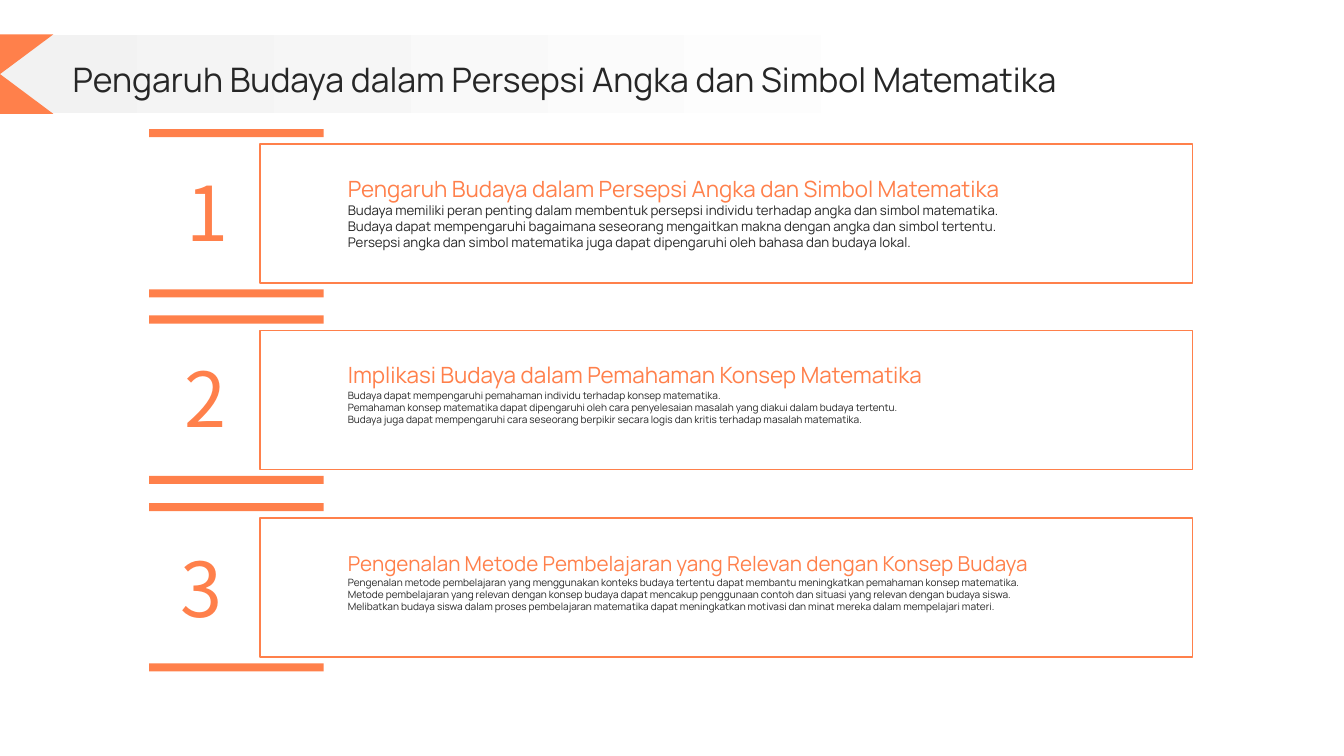
from copy import deepcopy

from pptx import Presentation
from pptx.dml.color import RGBColor
from pptx.enum.shapes import MSO_SHAPE
from pptx.enum.text import MSO_ANCHOR, MSO_AUTO_SIZE, PP_ALIGN
from pptx.oxml.ns import qn
from pptx.util import Pt

RECT, COLLATE = MSO_SHAPE.RECTANGLE, MSO_SHAPE.FLOWCHART_COLLATE
TOP, MIDDLE, BOTTOM = MSO_ANCHOR.TOP, MSO_ANCHOR.MIDDLE, MSO_ANCHOR.BOTTOM
LEFT, CENTER = PP_ALIGN.LEFT, PP_ALIGN.CENTER
NO_FIT, GROW = MSO_AUTO_SIZE.NONE, MSO_AUTO_SIZE.SHAPE_TO_FIT_TEXT

PX = 9144  # 100 px to the inch
COLORS = {"accent": "FF804B", "ink": "262626", "paper": "FFFFFF", "mist": "F2F2F2"}
TITLE = "Pengaruh Budaya dalam Persepsi Angka dan Simbol Matematika"

# heading, its size, body lines, their size, left and top offset of the number
CARDS = [
    (TITLE, 16, [
        "Budaya memiliki peran penting dalam membentuk persepsi individu terhadap angka dan simbol matematika.",
        "Budaya dapat mempengaruhi bagaimana seseorang mengaitkan makna dengan angka dan simbol tertentu.",
        "Persepsi angka dan simbol matematika juga dapat dipengaruhi oleh bahasa dan budaya lokal.",
    ], 9.5, 175, 17),
    ("Implikasi Budaya dalam Pemahaman Konsep Matematika", 16, [
        "Budaya dapat mempengaruhi pemahaman individu terhadap konsep matematika.",
        "Pemahaman konsep matematika dapat dipengaruhi oleh cara penyelesaian masalah yang diakui dalam budaya tertentu.",
        "Budaya juga dapat mempengaruhi cara seseorang berpikir secara logis dan kritis terhadap masalah matematika.",
    ], 7.2, 173, 16),
    ("Pengenalan Metode Pembelajaran yang Relevan dengan Konsep Budaya", 14.7, [
        "Pengenalan metode pembelajaran yang menggunakan konteks budaya tertentu dapat membantu meningkatkan pemahaman konsep matematika.",
        "Metode pembelajaran yang relevan dengan konsep budaya dapat mencakup penggunaan contoh dan situasi yang relevan dengan budaya siswa.",
        "Melibatkan budaya siswa dalam proses pembelajaran matematika dapat meningkatkan motivasi dan minat mereka dalam mempelajari materi.",
    ], 7.2, 169, 19),
]


def apply(target, values):
    for name, value in values.items():
        setattr(target, name, value)


class Deck:
    def __init__(self, slide, font):
        self.slide, self.font = slide, font

    def color(self, name):
        return RGBColor.from_string(COLORS[name])

    def shape(self, kind, box, fill, line=None):
        item = self.slide.shapes.add_shape(kind, *(n * PX for n in box))
        item.shadow.inherit = False
        item.fill.solid()
        item.fill.fore_color.rgb = self.color(fill)
        if line:
            item.line.color.rgb = self.color(line)
            item.line.width = Pt(1)
        else:
            item.line.fill.background()
        return item

    def fade(self, box, start, end, stop):
        fill = self.shape(RECT, box, start).fill
        fill.gradient()
        fill.gradient_angle = 0
        for mark, name, place in zip(fill.gradient_stops, (start, end), (0, stop)):
            mark.color.rgb = self.color(name)
            mark.position = place

    def text(self, box, words, size, color, anchor=TOP, align=LEFT, font=None, **frame):
        area = self.slide.shapes.add_textbox(*(n * PX for n in box)).text_frame
        base = {"word_wrap": True, "auto_size": NO_FIT, "vertical_anchor": anchor,
                "margin_left": 0, "margin_right": 0, "margin_top": 0, "margin_bottom": 0}
        apply(area, base | frame)
        para = area.paragraphs[0]
        para.text = words
        para.alignment = align
        for run in para.runs:
            apply(run.font, {"size": Pt(size), "name": font or self.font})
            run.font.color.rgb = self.color(color)
        # Line breaks take the same size as the text
        for gap in para._p.findall(qn("a:br")):
            gap.append(deepcopy(para.runs[0]._r.rPr))

    def number(self, box, digit):
        self.text(box, digit, 54, "accent", align=CENTER, font="Noto Sans CJK SC",
                  word_wrap=False, auto_size=GROW, margin_left=10 * PX,
                  margin_right=10 * PX, margin_top=5 * PX, margin_bottom=5 * PX)


def main():
    prs = Presentation()
    prs.slide_width, prs.slide_height = 1333 * PX, 750 * PX
    deck = Deck(prs.slides.add_slide(prs.slide_layouts[6]), "Manrope")

    # Numbered cards, each between two bars
    for i, (head, head_size, lines, size, left, drop) in enumerate(CARDS):
        top = 143 + i * 371 // 2
        deck.shape(RECT, (258, top, 925, 138), "paper", "accent")
        deck.text((345, top + 58, 807, 65), "\n".join(lines), size, "ink")
        deck.text((345, top + 20, 807, 37), head, head_size, "accent", BOTTOM)
        for shift in (-15, 144):
            deck.shape(RECT, (148, top + shift, 173, 8), "accent")
        deck.number((left, top + drop, 60, 101), str(i + 1))

    # Title band
    deck.fade((0, 35, 1188, 77), "mist", "paper", 0.8)
    deck.shape(COLLATE, (-53, 34, 106, 79), "accent")
    deck.text((72, 53, 1188, 51), TITLE, 24.1, "ink", MIDDLE)

    prs.save("out.pptx")


if __name__ == "__main__":
    main()
